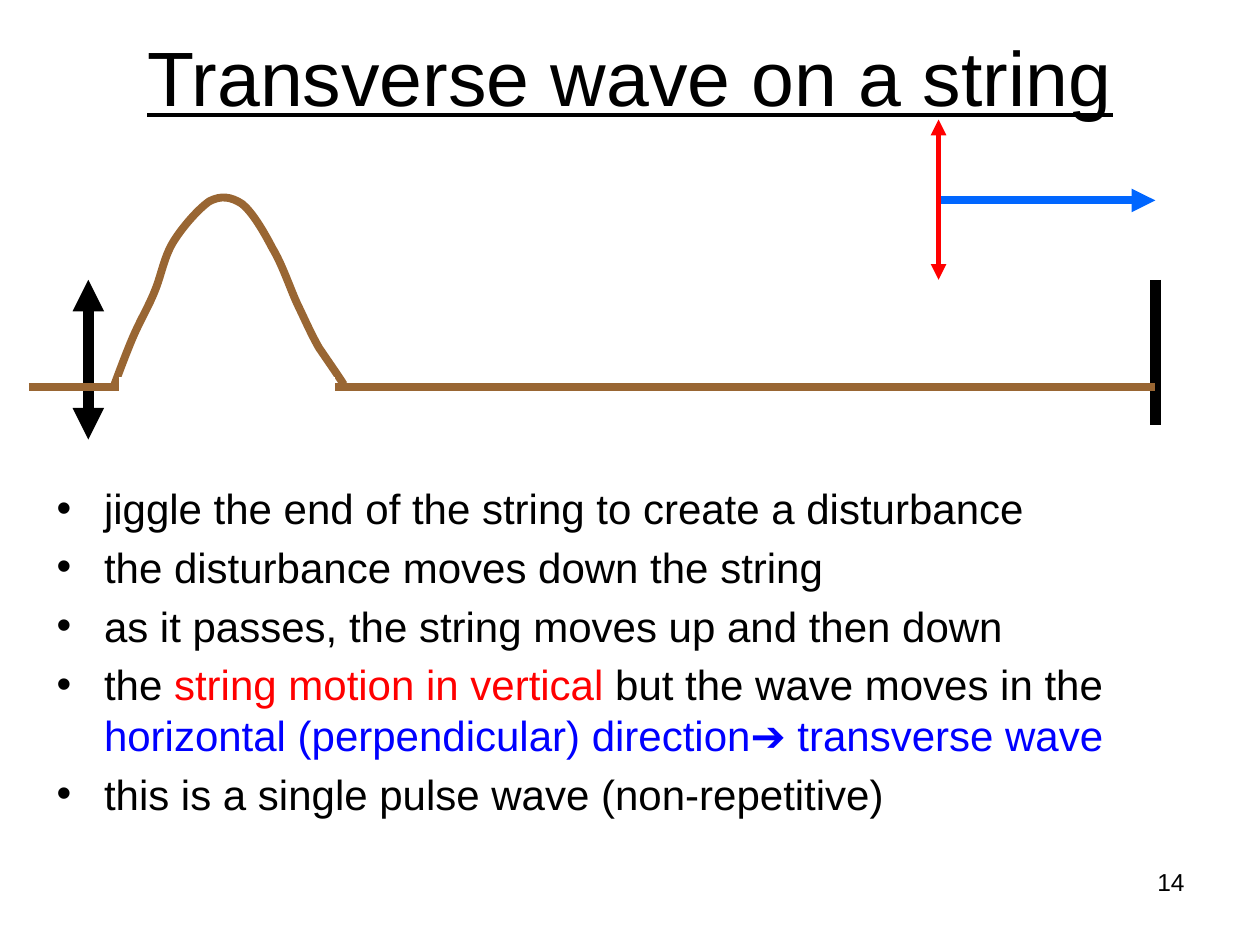
from dataclasses import dataclass

from lxml import etree
from pptx import Presentation
from pptx.dml.color import RGBColor
from pptx.enum.shapes import MSO_CONNECTOR
from pptx.enum.text import MSO_ANCHOR, MSO_AUTO_SIZE, PP_ALIGN
from pptx.oxml.ns import qn
from pptx.util import Cm, Pt

STRAIGHT = MSO_CONNECTOR.STRAIGHT
MIDDLE = MSO_ANCHOR.MIDDLE
NO_AUTOFIT = MSO_AUTO_SIZE.NONE
CENTER, RIGHT = PP_ALIGN.CENTER, PP_ALIGN.RIGHT

BLACK = RGBColor(0x00, 0x00, 0x00)
WHITE = RGBColor(0xFF, 0xFF, 0xFF)
RED = RGBColor(0xFF, 0x00, 0x00)
BLUE = RGBColor(0x00, 0x00, 0xFF)
ARROW_BLUE = RGBColor(0x00, 0x66, 0xFF)
BROWN = RGBColor(0x99, 0x66, 0x33)

FONT = "Arial"
STRING_Y = 7.8
WALL_X = 23.29
HAND_TOP = 5.64
STRING_WIDTH = 4.5


@dataclass(frozen=True)
class Line:
    """A straight line, in centimetres, with a width in points."""
    start: tuple[float, float]
    end: tuple[float, float]
    color: RGBColor
    width: float
    arrowheads: tuple[str, ...] = ()


BOTH_ENDS = ("headEnd", "tailEnd")
WALL = Line((WALL_X, HAND_TOP), (WALL_X, 8.56), BLACK, 6)
VERTICAL_MOTION = Line((18.92, HAND_TOP), (18.92, 2.41), RED, 3, BOTH_ENDS)
WAVE_MOTION = Line((18.97, 4.04), (WALL_X, 4.04), ARROW_BLUE, 4.5, ("tailEnd",))
HAND_MOTION = Line((1.78, HAND_TOP), (1.78, 8.86), BLACK, 6, BOTH_ENDS)
STRING = Line((0.58, STRING_Y), (WALL_X, STRING_Y), BROWN, STRING_WIDTH)
STRING_GAP = Line((2.39, 7.75), (6.76, 7.75), WHITE, 9)

# Each row is one Bezier curve: two control points and an end point
PULSE_START = (2.29, STRING_Y)
PULSE_CURVES = [
    ((2.36, 7.62), (2.57, 7.04), (2.72, 6.71)),
    ((2.87, 6.38), (3.0, 6.17), (3.12, 5.87)),
    ((3.25, 5.56), (3.3, 5.21), (3.48, 4.9)),
    ((3.66, 4.6), (3.99, 4.22), (4.22, 4.06)),
    ((4.45, 3.94), (4.65, 3.96), (4.88, 4.11)),
    ((5.08, 4.27), (5.31, 4.65), (5.49, 5.0)),
    ((5.69, 5.33), (5.84, 5.79), (5.99, 6.12)),
    ((6.15, 6.45), (6.27, 6.73), (6.43, 7.01)),
    ((6.6, 7.26), (6.83, 7.59), (6.93, 7.75)),
]

BULLETS = [
    [("jiggle the end of the string to create a disturbance", BLACK)],
    [("the disturbance moves down the string", BLACK)],
    [("as it passes, the string moves up and then down", BLACK)],
    [("the ", BLACK), ("string motion in vertical", RED),
     (" but the wave moves in the ", BLACK),
     ("horizontal (perpendicular) direction➔ transverse wave", BLUE)],
    [("this is a single pulse wave (non-repetitive)", BLACK)],
]


def place(shape, left: float, top: float, width: float, height: float) -> None:
    shape.left, shape.top = Cm(left), Cm(top)
    shape.width, shape.height = Cm(width), Cm(height)


def set_font(paragraph, size: float) -> None:
    paragraph.font.name = FONT
    paragraph.font.size = Pt(size)
    paragraph.font.color.rgb = BLACK


def draw_line(shapes, line: Line) -> None:
    points = [Cm(value) for value in line.start + line.end]
    connector = shapes.add_connector(STRAIGHT, *points)
    connector.line.color.rgb = line.color
    connector.line.width = Pt(line.width)
    outline = connector.line._get_or_add_ln()
    for end in line.arrowheads:
        etree.SubElement(outline, qn(f"a:{end}"), type="triangle")
    etree.SubElement(connector._element.spPr, qn("a:effectLst"))


def draw_pulse(shapes) -> None:
    points = [(Cm(x), Cm(y)) for curve in PULSE_CURVES for x, y in curve]
    builder = shapes.build_freeform(Cm(PULSE_START[0]), Cm(PULSE_START[1]))
    builder.add_line_segments(points, close=False)
    pulse = builder.convert_to_shape()
    pulse.shadow.inherit = False
    pulse.fill.background()
    pulse.line.color.rgb = BROWN
    pulse.line.width = Pt(STRING_WIDTH)
    # Join every three segments into one Bezier curve
    path = pulse._element.find(f".//{qn('a:path')}")
    segments = path.findall(qn("a:lnTo"))
    for first in range(0, len(segments), 3):
        curve = etree.SubElement(path, qn("a:cubicBezTo"))
        for segment in segments[first:first + 3]:
            curve.append(segment[0])
            path.remove(segment)


def fill_title(title) -> None:
    place(title, 1.27, 0.38, 22.86, 2.31)
    title.text_frame.text = "Transverse wave on a string"
    title.text_frame.auto_size = NO_AUTOFIT
    title.text_frame.vertical_anchor = MIDDLE
    paragraph = title.text_frame.paragraphs[0]
    paragraph.alignment = CENTER
    set_font(paragraph, 44)
    paragraph.font.underline = True


def fill_body(body) -> None:
    place(body, 0.89, 9.6, 23.52, 7.7)
    frame = body.text_frame
    frame.auto_size = NO_AUTOFIT
    for index, bullet in enumerate(BULLETS):
        paragraph = frame.add_paragraph() if index else frame.paragraphs[0]
        set_font(paragraph, 24)
        for text, color in bullet:
            run = paragraph.add_run()
            run.text = text
            if color != BLACK:
                run.font.color.rgb = color


def add_slide_number(shapes) -> None:
    box = shapes.add_textbox(Cm(18.21), Cm(17.35), Cm(5.92), Cm(1.32))
    box.text_frame.word_wrap = True
    box.text_frame.text = "14"
    paragraph = box.text_frame.paragraphs[0]
    paragraph.alignment = RIGHT
    set_font(paragraph, 14)


def main() -> None:
    presentation = Presentation()
    presentation.slide_width, presentation.slide_height = Cm(25.4), Cm(19.05)
    slide = presentation.slides.add_slide(presentation.slide_layouts[1])
    shapes = slide.shapes

    # Title and list
    fill_title(shapes.title)
    fill_body(slide.placeholders[1])

    # Wall and motion arrows
    for line in (WALL, VERTICAL_MOTION, WAVE_MOTION, HAND_MOTION):
        draw_line(shapes, line)
    add_slide_number(shapes)

    # String, with the pulse in place of its flat part
    draw_line(shapes, STRING)
    pulse_group = shapes.add_group_shape()
    draw_pulse(pulse_group.shapes)
    draw_line(pulse_group.shapes, STRING_GAP)

    presentation.save("out.pptx")


if __name__ == "__main__":
    main()
